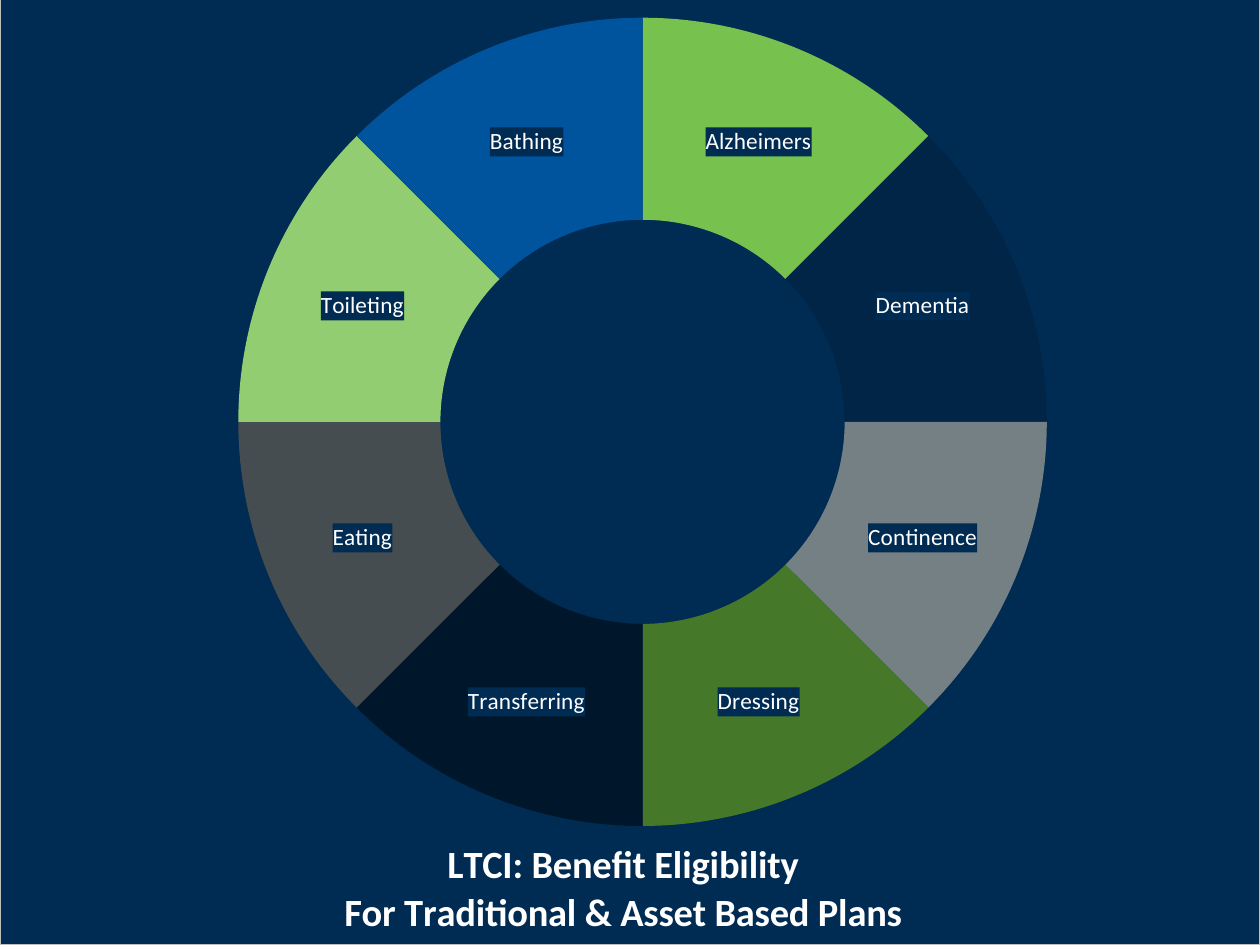
from dataclasses import dataclass

from pptx import Presentation
from pptx.chart.chart import Chart
from pptx.chart.data import CategoryChartData
from pptx.chart.point import Point
from pptx.dml.color import RGBColor
from pptx.enum.chart import XL_CHART_TYPE
from pptx.oxml import parse_xml
from pptx.oxml.ns import nsdecls, qn
from pptx.util import Emu, Pt

SCALE = 914400 / 126
FONT = "Calibri"
COLORS = {
    "navy": "002B52",
    "white": "FFFFFF",
    "black": "000000",
    "edge": "BFBFBF",
    "lime": "77C14E",
    "ink": "002546",
    "gray": "758085",
    "moss": "46782A",
    "night": "00162A",
    "slate": "464D50",
    "mint": "92CD71",
    "blue": "00549E",
}


@dataclass(frozen=True)
class Slice:
    """One ring slice."""

    label: str
    color: str
    value: int = 12


SLICES = (
    Slice("Alzheimers", "lime"),
    Slice("Dementia", "ink"),
    Slice("Continence", "gray"),
    Slice("Dressing", "moss"),
    Slice("Transferring", "night"),
    Slice("Eating", "slate"),
    Slice("Toileting", "mint"),
    Slice("Bathing", "blue"),
)
TITLE = ("LTCI: Benefit Eligibility", "For Traditional & Asset Based Plans")


def px(count: int) -> Emu:
    """Turn pixels into EMU."""
    return Emu(round(count * SCALE))


def rgb(name: str) -> RGBColor:
    """Look up a colour."""
    return RGBColor.from_string(COLORS[name])


def write(para, text: str, size: float, bold: bool) -> None:
    """Add one white run."""
    run = para.add_run()
    run.text = text
    font = run.font
    font.name, font.size, font.bold = FONT, Pt(size), bold
    font.color.rgb = rgb("white")


def layout(target: str, **parts: float):
    """Build a manual layout."""
    inner = f'<c:layoutTarget val="{target}"/>' if target else ""
    modes = "".join(f'<c:{key}Mode val="edge"/>' for key in ("x", "y"))
    sizes = "".join(f'<c:{key} val="{val}"/>' for key, val in parts.items())
    return parse_xml(
        f'<c:layout {nsdecls("c")}><c:manualLayout>{inner}{modes}{sizes}'
        "</c:manualLayout></c:layout>"
    )


def box(fill: str, edge: str = ""):
    """Build fill and border properties."""
    line = (
        f'<a:ln w="{Pt(0.75)}"><a:solidFill><a:srgbClr val="{COLORS[edge]}"/>'
        "</a:solidFill></a:ln>"
        if edge
        else "<a:ln><a:noFill/></a:ln>"
    )
    return parse_xml(
        f'<c:spPr {nsdecls("c", "a")}><a:solidFill>'
        f'<a:srgbClr val="{COLORS[fill]}"/></a:solidFill>{line}</c:spPr>'
    )


def paint(point: Point, part: Slice) -> None:
    """Colour and label a slice."""
    point.format.fill.solid()
    point.format.fill.fore_color.rgb = rgb(part.color)
    point.format.line.fill.background()
    frame = point.data_label.text_frame
    write(frame.paragraphs[0], part.label, 13.3, False)


def head(chart: Chart) -> None:
    """Write the title below the ring."""
    chart.has_title = True
    title = chart.chart_title
    title.include_in_layout = False
    frame = title.text_frame
    for row, text in enumerate(TITLE):
        para = frame.add_paragraph() if row else frame.paragraphs[0]
        write(para, text, 22, True)


def place(chart: Chart) -> None:
    """Set the layouts and the box fills."""
    root = chart.element.find(qn("c:chart"))
    plot = root.find(qn("c:plotArea"))
    title = root.find(qn("c:title"))
    for node in (plot, title):
        for old in node.findall(qn("c:layout")):
            node.remove(old)
    plot.insert(0, layout("inner", x=0.18, y=0.06, w=0.66, h=0.82))
    title.find(qn("c:tx")).addnext(layout("", x=0.27, y=0.89))
    for label in root.iter(qn("c:dLbl")):
        label.find(qn("c:tx")).addnext(box("navy"))
    root.addnext(box("navy", "edge"))


def draw(slide) -> None:
    """Draw the ring chart."""
    data = CategoryChartData()
    data.categories = [str(num) for num in range(1, len(SLICES) + 1)]
    data.add_series("Series 1", [part.value for part in SLICES])
    chart = slide.shapes.add_chart(
        XL_CHART_TYPE.DOUGHNUT, px(0), px(-42), px(1260), px(987), data
    ).chart
    chart.has_legend = False
    chart.font.name, chart.font.size = FONT, Pt(10)
    chart.font.color.rgb = rgb("black")
    plot = chart.plots[0]
    plot.vary_by_categories = True
    for num, part in enumerate(SLICES):
        paint(plot.series[0].points[num], part)
    head(chart)
    place(chart)


def main() -> None:
    """Build and save the slide."""
    deck = Presentation()
    deck.slide_width, deck.slide_height = px(1260), px(945)
    draw(deck.slides.add_slide(deck.slide_layouts[6]))
    deck.save("out.pptx")


if __name__ == "__main__":
    main()
